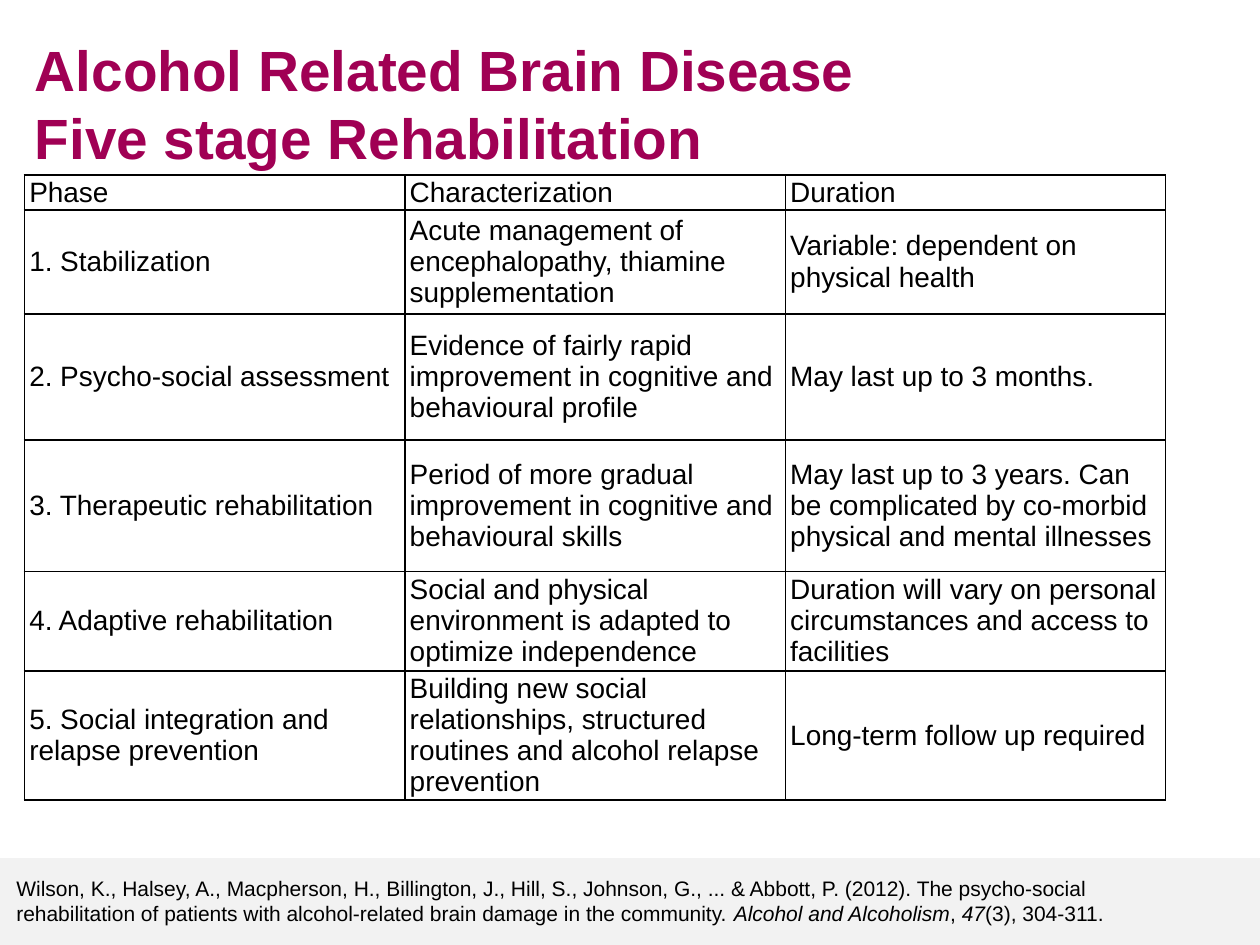
from lxml import etree
from pptx import Presentation
from pptx.dml.color import RGBColor
from pptx.enum.shapes import MSO_SHAPE
from pptx.enum.text import MSO_ANCHOR, MSO_AUTO_SIZE, PP_ALIGN
from pptx.oxml.ns import qn
from pptx.util import Cm, Pt

RECT = MSO_SHAPE.RECTANGLE
TOP, MIDDLE = MSO_ANCHOR.TOP, MSO_ANCHOR.MIDDLE
NO_FIT, LEFT = MSO_AUTO_SIZE.NONE, PP_ALIGN.LEFT
TITLE_ONLY = 5

TITLE = "Alcohol Related Brain Disease\vFive stage Rehabilitation"
ROWS = [
    ("Phase", "Characterization", "Duration"),
    ("1. Stabilization",
     "Acute management of encephalopathy, thiamine supplementation",
     "Variable: dependent on physical health"),
    ("2. Psycho-social assessment",
     "Evidence of fairly rapid improvement in cognitive and behavioural profile",
     "May last up to 3 months."),
    ("3. Therapeutic rehabilitation",
     "Period of more gradual improvement in cognitive and behavioural skills",
     "May last up to 3 years. Can be complicated by co-morbid physical and mental illnesses"),
    ("4. Adaptive rehabilitation",
     "Social and physical environment is adapted to optimize independence",
     "Duration will vary on personal circumstances and access to facilities"),
    ("5. Social integration and relapse prevention",
     "Building new social relationships, structured routines and alcohol relapse prevention",
     "Long-term follow up required"),
]
CITATION = [
    ("Wilson, K., Halsey, A., Macpherson, H., Billington, J., Hill, S., Johnson, G., ... "
     "& Abbott, P. (2012). The psycho-social rehabilitation of patients with "
     "alcohol-related brain damage in the community. ", False),
    ("Alcohol and Alcoholism", True),
    (", ", False),
    ("47", True),
    ("(3), 304-311.", False),
]
COLORS = {"title": "A00054", "text": "000000", "band": "F2F2F2"}
FONT = "Arial"
COL_WIDTH = 7.67
ROW_HEIGHTS = [0.7, 2.1, 2.54, 2.65, 2.01, 2.6]


def color(name):
    return RGBColor.from_string(COLORS[name])


def format_paragraph(p, size, name, bold=False):
    p.alignment = LEFT
    p.font.name, p.font.size, p.font.bold = FONT, Pt(size), bold
    p.font.color.rgb = color(name)


def add_borders(cell):
    tcPr = cell._tc.get_or_add_tcPr()
    for i, side in enumerate(("lnL", "lnR", "lnT", "lnB")):
        ln = etree.Element(qn(f"a:{side}"), w=str(Pt(1)))
        fill = etree.SubElement(ln, qn("a:solidFill"))
        etree.SubElement(fill, qn("a:srgbClr"), val=COLORS["text"])
        tcPr.insert(i, ln)


def add_title(s):
    sp = s.shapes.title
    sp.left, sp.top, sp.width, sp.height = Cm(0.45), Cm(0.58), Cm(23.93), Cm(2.11)
    tf = sp.text_frame
    tf.text = TITLE
    tf.auto_size, tf.word_wrap, tf.vertical_anchor = NO_FIT, True, TOP
    format_paragraph(tf.paragraphs[0], 32.4, "title", True)


def add_phases(s):
    table = s.shapes.add_table(
        len(ROWS), len(ROWS[0]), Cm(0.49), Cm(3.53),
        Cm(COL_WIDTH * len(ROWS[0])), Cm(sum(ROW_HEIGHTS))).table
    table.first_row = table.horz_banding = False
    for col in table.columns:
        col.width = Cm(COL_WIDTH)
    for row, height, texts in zip(table.rows, ROW_HEIGHTS, ROWS):
        row.height = Cm(height)
        for cell, text in zip(row.cells, texts):
            cell.text = text
            cell.fill.background()
            cell.vertical_anchor = MIDDLE
            cell.margin_left = cell.margin_right = Cm(0.1)
            cell.margin_top = cell.margin_bottom = Cm(0.03)
            format_paragraph(cell.text_frame.paragraphs[0], 16, "text")
            add_borders(cell)


def add_footer(s):
    band = s.shapes.add_shape(RECT, 0, Cm(17.3), Cm(25.4), Cm(1.75))
    band.shadow.inherit = False
    band.fill.solid()
    band.fill.fore_color.rgb = color("band")
    band.line.fill.background()

    tf = s.shapes.add_textbox(Cm(0.08), Cm(17.53), Cm(23.39), Cm(1.27)).text_frame
    tf.word_wrap = True
    p = tf.paragraphs[0]
    format_paragraph(p, 12, "text")
    for text, italic in CITATION:
        r = p.add_run()
        r.text, r.font.italic = text, italic


def main():
    prs = Presentation()
    prs.slide_width, prs.slide_height = Cm(25.4), Cm(19.05)
    s = prs.slides.add_slide(prs.slide_layouts[TITLE_ONLY])
    add_title(s)
    add_phases(s)
    add_footer(s)
    prs.save("out.pptx")


if __name__ == "__main__":
    main()
